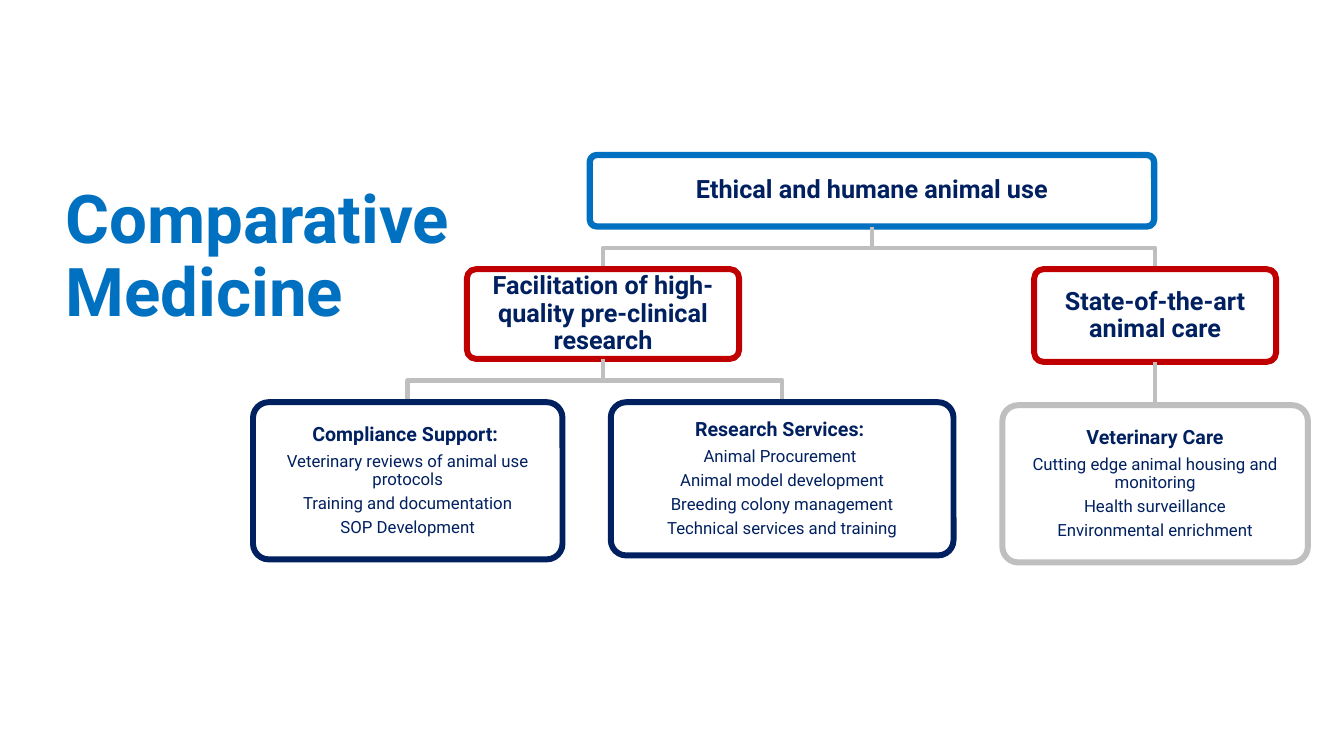
from dataclasses import dataclass, field

from lxml.etree import SubElement
from pptx import Presentation
from pptx.dml.color import RGBColor
from pptx.enum.shapes import MSO_CONNECTOR, MSO_SHAPE
from pptx.enum.text import MSO_ANCHOR, MSO_AUTO_SIZE, PP_ALIGN
from pptx.oxml.ns import qn
from pptx.shapes.base import BaseShape
from pptx.slide import Slide
from pptx.text.text import TextFrame
from pptx.util import Inches, Pt

SLIDE_WIDTH = Inches(13.333)
SLIDE_HEIGHT = Inches(7.5)
FONT = "Roboto"
BLUE = "0070C0"
NAVY = "002060"
RED = "C00000"
GRAY = "BFBFBF"


@dataclass
class Node:
    """A box of the tree, placed in percent of the slide by its top centre."""

    center: float
    top: float
    width: float
    height: float
    outline: str
    heading: str
    items: list[str] = field(default_factory=list)
    heading_size: float = 14
    inset: float = 0.06
    line_width: float = 4.25
    children: list["Node"] = field(default_factory=list)


COMPLIANCE = Node(30.34, 53.2, 23.03, 20.8, NAVY, "Compliance Support: ", [
    "Veterinary reviews of animal use protocols",
    "Training and documentation",
    "SOP Development",
])
RESEARCH = Node(58.2, 53.2, 25.5, 20.27, NAVY, "Research Services: ", [
    "Animal Procurement ",
    "Animal model development",
    "Breeding colony management",
    "Technical services and training",
])
VETERINARY = Node(85.95, 53.6, 22.73, 20.8, GRAY, "Veterinary Care", [
    "Cutting edge animal housing and monitoring",
    "Health surveillance",
    "Environmental enrichment",
])
FACILITATION = Node(
    44.87, 35.6, 20.25, 11.87, RED, "Facilitation of high- quality pre-clinical research",
    heading_size=18, inset=0.07, children=[COMPLIANCE, RESEARCH],
)
ANIMAL_CARE = Node(
    85.95, 35.6, 18, 12.27, RED, "State-of-the-art animal care",
    heading_size=18, inset=0.07, children=[VETERINARY],
)
ETHICAL_USE = Node(
    64.88, 20.5, 42, 9.47, BLUE, "Ethical and humane animal use",
    heading_size=18, inset=0.07, line_width=4.5, children=[FACILITATION, ANIMAL_CARE],
)


def across(percent: float) -> int:
    """Turn a share of the slide width into a length."""
    return round(SLIDE_WIDTH * percent / 100)


def down(percent: float) -> int:
    """Turn a share of the slide height into a length."""
    return round(SLIDE_HEIGHT * percent / 100)


def color(value: str) -> RGBColor:
    """Turn a hex string into a colour."""
    return RGBColor.from_string(value)


def write_paragraph(
    frame: TextFrame, index: int, text: str, size: float, bold: bool, ink: str,
    alignment: PP_ALIGN, space_after: float,
) -> None:
    """Write one paragraph with a single run."""
    paragraph = frame.paragraphs[0] if index == 0 else frame.add_paragraph()
    paragraph.alignment = alignment
    paragraph.line_spacing = 0.9
    paragraph.space_before = Pt(0)
    paragraph.space_after = Pt(space_after)
    run = paragraph.add_run()
    run.text = text
    run.font.name = FONT
    run.font.size = Pt(size)
    run.font.bold = bold
    run.font.color.rgb = color(ink)


def style_outline(shape: BaseShape, outline: str, width: float) -> None:
    """Set the colour and width of an outline."""
    shape.line.color.rgb = color(outline)
    shape.line.width = Pt(width)


def draw_link(slide: Slide, parent: Node, child: Node) -> None:
    """Join a parent to a child, straight or by way of a shared bar."""
    start_x, end_x = across(parent.center), across(child.center)
    start_y, end_y = down(parent.top + parent.height), down(child.top)
    if start_x == end_x:
        link = slide.shapes.add_connector(
            MSO_CONNECTOR.STRAIGHT, start_x, start_y, end_x, end_y
        )
        SubElement(link.element.spPr, qn("a:effectLst"))
    else:
        middle_y = (start_y + end_y) // 2
        builder = slide.shapes.build_freeform(start_x, start_y)
        builder.add_line_segments(
            [(start_x, middle_y), (end_x, middle_y), (end_x, end_y)], close=False
        )
        link = builder.convert_to_shape()
        link.fill.background()
        link.shadow.inherit = False
    style_outline(link, GRAY, 3.25)


def draw_box(slide: Slide, node: Node) -> None:
    """Draw the rounded box of a node with its text."""
    box = slide.shapes.add_shape(
        MSO_SHAPE.ROUNDED_RECTANGLE, across(node.center - node.width / 2),
        down(node.top), across(node.width), down(node.height),
    )
    box.adjustments[0] = 0.1
    box.fill.background()
    box.shadow.inherit = False
    style_outline(box, node.outline, node.line_width)
    frame = box.text_frame
    frame.word_wrap = True
    frame.vertical_anchor = MSO_ANCHOR.MIDDLE
    frame.margin_left = frame.margin_right = Inches(node.inset)
    frame.margin_top = frame.margin_bottom = Inches(node.inset)
    for index, text in enumerate([node.heading, *node.items]):
        size = 12 if index else node.heading_size
        write_paragraph(
            frame, index, text, size, index == 0, NAVY, PP_ALIGN.CENTER, size * 0.35
        )


def draw_tree(slide: Slide, node: Node) -> None:
    """Draw a node, then the links and branches below it."""
    draw_box(slide, node)
    for child in node.children:
        draw_link(slide, node, child)
        draw_tree(slide, child)


def draw_title(slide: Slide, text: str) -> None:
    """Place and format the title placeholder."""
    title = slide.shapes.title
    title.left, title.top = across(4.13), down(23.87)
    title.width, title.height = across(34.5), down(50)
    frame = title.text_frame
    frame.word_wrap = True
    frame.auto_size = MSO_AUTO_SIZE.NONE
    frame.vertical_anchor = MSO_ANCHOR.TOP
    write_paragraph(frame, 0, text, 48, True, BLUE, PP_ALIGN.LEFT, 0)


def main() -> None:
    """Build the slide and save it."""
    presentation = Presentation()
    presentation.slide_width = SLIDE_WIDTH
    presentation.slide_height = SLIDE_HEIGHT
    slide = presentation.slides.add_slide(presentation.slide_layouts[5])
    draw_title(slide, "Comparative Medicine")
    draw_tree(slide, ETHICAL_USE)
    presentation.save("out.pptx")


if __name__ == "__main__":
    main()
